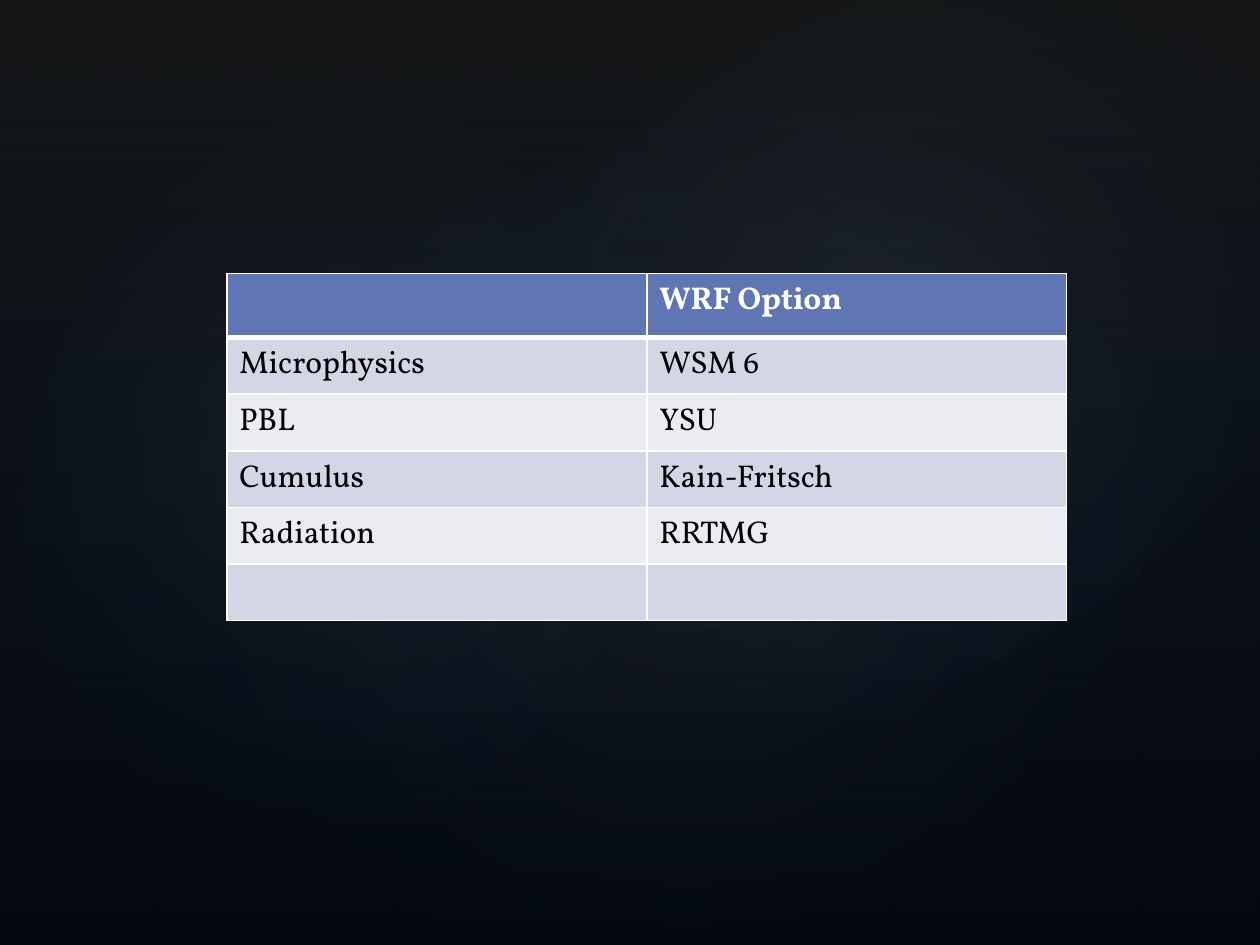
import pptx
import pptx.dml.color
import pptx.enum.shapes
import pptx.oxml
import pptx.oxml.ns
import pptx.util

Pt = pptx.util.Pt
RGB = pptx.dml.color.RGBColor
SHAPE = pptx.enum.shapes.MSO_SHAPE
NS = pptx.oxml.ns.nsdecls("a")

BLACK = RGB(0x00, 0x00, 0x00)
WHITE = RGB(0xFF, 0xFF, 0xFF)
CHARCOAL = RGB(0x3B, 0x40, 0x42)
NAVY = RGB(0x2F, 0x58, 0x97)
MIST = RGB(0xAC, 0xB3, 0xB6)
HEADER = RGB(0x60, 0x76, 0xB4)
BAND_DARK = RGB(0xD2, 0xD6, 0xE5)
BAND_LIGHT = RGB(0xEA, 0xEC, 0xF2)
FONT = "Vollkorn"


def add_glow(kind, box, rotation, stops, direction):
    """Add a borderless shape with a translucent gradient; stops are (percent, colour, alpha)."""
    s = slide.shapes.add_shape(kind, *[Pt(v) for v in box])
    s.rotation = rotation
    s.shadow.inherit = False
    s.line.fill.background()
    gs = "".join(
        f'<a:gs pos="{pos * 1000}"><a:srgbClr val="{color}">'
        f'<a:alpha val="{alpha * 1000}"/></a:srgbClr></a:gs>'
        for pos, color, alpha in stops)
    s._element.spPr.insert(2, pptx.oxml.parse_xml(
        f'<a:gradFill {NS} rotWithShape="1"><a:gsLst>{gs}</a:gsLst>{direction}</a:gradFill>'))


prs = pptx.Presentation()
prs.slide_width, prs.slide_height = Pt(720), Pt(540)
slide = prs.slides.add_slide(prs.slide_layouts[6])

# Background: black, a vertical tint and three soft glows
slide.background.fill.solid()
slide.background.fill.fore_color.rgb = BLACK
add_glow(SHAPE.RECTANGLE, (0, 0, 720, 540), 0,
         [(0, CHARCOAL, 36), (100, NAVY, 10)], '<a:lin ang="5400000" scaled="0"/>')
RADIAL = ('<a:path path="circle"><a:fillToRect l="50000" t="50000" '
          'r="50000" b="50000"/></a:path>')
for box, rotation, alpha in [
    ((108, 82.1, 570.2, 449.3), 328.7, 7),
    ((-21.6, 92.2, 436.3, 352.8), 294.3, 8),
    ((257.8, 9.4, 510.5, 374.4), 328.7, 8),
]:
    add_glow(SHAPE.OVAL, box, rotation, [(0, MIST, alpha), (58, NAVY, 0)], RADIAL)

# Table of model options
rows = [
    ("", "WRF Option"),
    ("Microphysics", "WSM 6"),
    ("PBL", "YSU"),
    ("Cumulus", "Kain-Fritsch"),
    ("Radiation", "RRTMG"),
    ("", ""),
]
table = slide.shapes.add_table(
    len(rows), 2, Pt(129.6), Pt(156.24), Pt(480), Pt(182.72)).table
for column in table.columns:
    column.width = Pt(240)

for i, texts in enumerate(rows):
    is_header = i == 0
    table.rows[i].height = Pt(36.72 if is_header else 29.2)
    band = HEADER if is_header else (BAND_DARK if i % 2 else BAND_LIGHT)
    widths = {"L": 1, "R": 1, "T": 3 if i == 1 else 1, "B": 3 if is_header else 1}
    for j, text in enumerate(texts):
        cell = table.cell(i, j)

        # Borders come before the fill in the cell properties
        tc_pr = cell._tc.get_or_add_tcPr()
        for side, width in widths.items():
            tc_pr.append(pptx.oxml.parse_xml(
                f'<a:ln{side} {NS} w="{Pt(width)}"><a:solidFill>'
                f'<a:srgbClr val="{WHITE}"/></a:solidFill></a:ln{side}>'))
        cell.fill.solid()
        cell.fill.fore_color.rgb = band

        p = cell.text_frame.paragraphs[0]
        if text:
            r = p.add_run()
            r.text = text
            style = {"name": FONT, "size": Pt(18), "bold": is_header}
            for name, value in style.items():
                setattr(r.font, name, value)
            r.font.color.rgb = WHITE if is_header else BLACK
        else:
            # Empty cells keep the line height of the text font
            p._p.append(pptx.oxml.parse_xml(
                f'<a:endParaRPr {NS} sz="1800"><a:latin typeface="{FONT}"/></a:endParaRPr>'))

prs.save("out.pptx")
